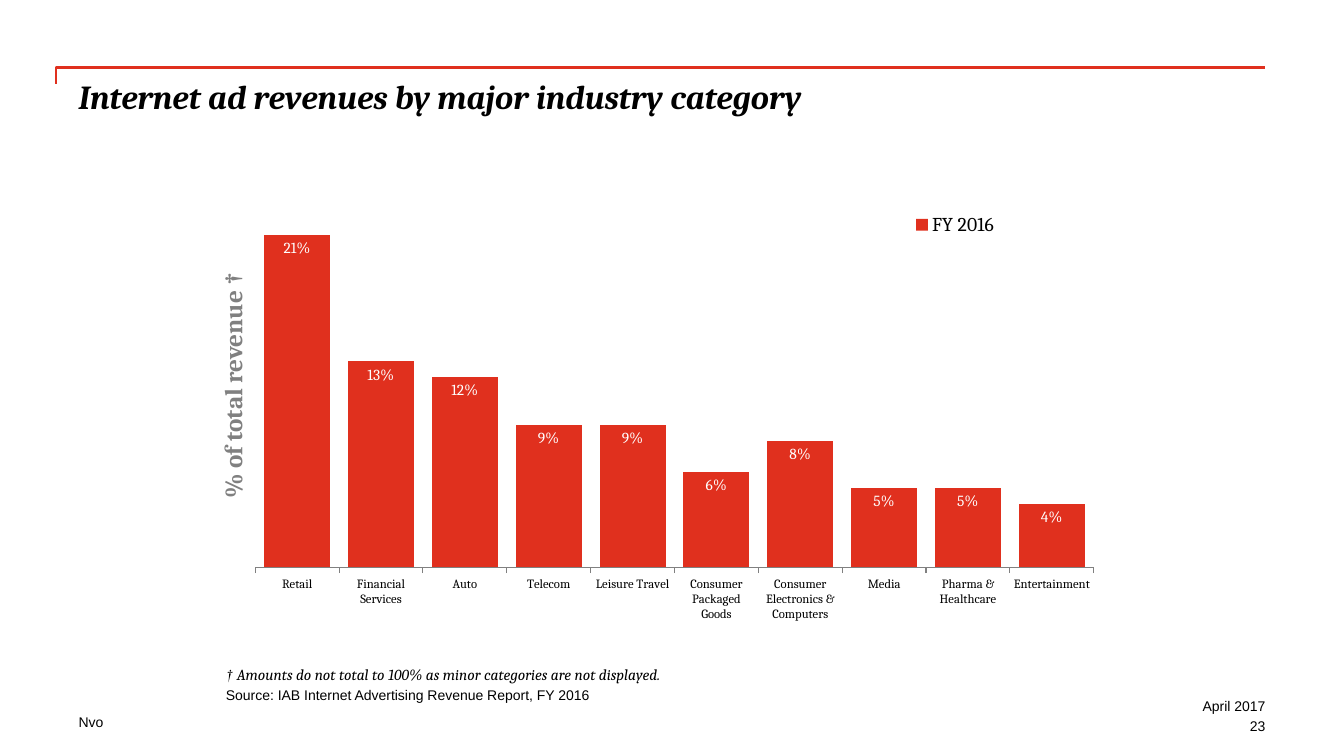
from lxml.etree import SubElement
from pptx import Presentation
from pptx.chart.data import CategoryChartData
from pptx.dml.color import RGBColor
from pptx.enum.chart import (XL_CHART_TYPE, XL_LABEL_POSITION,
                             XL_LEGEND_POSITION, XL_TICK_MARK)
from pptx.enum.text import MSO_ANCHOR, PP_ALIGN
from pptx.oxml.ns import qn
from pptx.util import Inches, Pt

COLORS = {"red": "E0301E", "black": "000000", "gray": "808080", "white": "FFFFFF"}
SERIF, SANS = "Cambria", "Arial"
REVENUE_SHARES = [
    ("Entertainment", 0.04),
    ("Pharma & Healthcare", 0.05),
    ("Media", 0.05),
    ("Consumer Electronics & Computers", 0.08),
    ("Consumer Packaged Goods", 0.06),
    ("Leisure Travel", 0.09),
    ("Telecom", 0.09),
    ("Auto", 0.12),
    ("Financial\nServices", 0.13),
    ("Retail", 0.21),
]


def rgb(name):
    return RGBColor.from_string(COLORS[name])


def set_font(font, size, name=SERIF, color="black", bold=False, italic=False):
    font.size, font.name = Pt(size), name
    font.bold, font.italic = bold, italic
    font.color.rgb = rgb(color)


def add_text(s, text, x, y, w, h, align=PP_ALIGN.LEFT, anchor=MSO_ANCHOR.TOP,
             rotation=0, **font):
    sp = s.shapes.add_textbox(Inches(x), Inches(y), Inches(w), Inches(h))
    sp.rotation = rotation
    tf = sp.text_frame
    tf.word_wrap = True
    tf.vertical_anchor = anchor
    tf.margin_left = tf.margin_right = tf.margin_top = tf.margin_bottom = 0
    p = tf.paragraphs[0]
    p.alignment = align
    r = p.add_run()
    r.text = text
    set_font(r.font, **font)


def set_layout(parent, index, inner=False, **fractions):
    """Place a chart part at fractions (x, y, w, h) of the chart."""
    for old in parent.findall(qn("c:layout")):
        parent.remove(old)
    layout = SubElement(parent, qn("c:layout"))
    parent.insert(index, layout)
    manual = SubElement(layout, qn("c:manualLayout"))
    if inner:
        SubElement(manual, qn("c:layoutTarget")).set("val", "inner")
    for mode in ("xMode", "yMode"):
        SubElement(manual, qn("c:" + mode)).set("val", "edge")
    for key, value in fractions.items():
        SubElement(manual, qn("c:" + key)).set("val", str(value))


def add_header(s, x, y, w):
    # Rule with a short drop at its left end
    builder = s.shapes.build_freeform(Inches(x), Inches(y + 0.16))
    builder.add_line_segments([(Inches(x), Inches(y)),
                               (Inches(x + w), Inches(y))], close=False)
    rule = builder.convert_to_shape()
    rule.shadow.inherit = False
    rule.fill.background()
    rule.line.color.rgb = rgb("red")
    rule.line.width = Pt(1.5)
    # Title
    add_text(s, "Internet ad revenues by major industry category",
             x + 0.22, y + 0.08, w - 0.22, 1, size=24, bold=True, italic=True)


def add_revenue_chart(s, x, y, w, h):
    data = CategoryChartData(number_format="0%")
    data.categories = [name for name, _ in REVENUE_SHARES]
    data.add_series("FY 2016", [share for _, share in REVENUE_SHARES])
    chart = s.shapes.add_chart(XL_CHART_TYPE.COLUMN_CLUSTERED, Inches(x), Inches(y),
                               Inches(w), Inches(h), data).chart
    chart.has_title = False
    set_font(chart.font, 18, SANS)

    # Columns and their labels
    plot = chart.plots[0]
    plot.gap_width = 27
    plot.vary_by_categories = False
    fill = plot.series[0].format.fill
    fill.solid()
    fill.fore_color.rgb = rgb("red")
    plot.has_data_labels = True
    labels = plot.data_labels
    labels.show_value = True
    labels.position = XL_LABEL_POSITION.INSIDE_END
    labels.number_format, labels.number_format_is_linked = "0%", False
    set_font(labels.font, 11, color="white")

    # Axes
    cat, val = chart.category_axis, chart.value_axis
    cat.reverse_order = True
    cat.has_major_gridlines = False
    cat.major_tick_mark = XL_TICK_MARK.OUTSIDE
    cat.format.line.color.rgb = rgb("gray")
    set_font(cat.tick_labels.font, 9)
    val.visible = False
    val.has_major_gridlines = False
    val.minimum_scale, val.maximum_scale = 0, 0.25

    # Legend and plot placement
    chart.has_legend = True
    legend = chart.legend
    legend.position = XL_LEGEND_POSITION.RIGHT
    legend.include_in_layout = False
    set_font(legend.font, 14)
    set_layout(legend._element, 1, x=0.75, y=0.1, w=0.11, h=0.08)
    set_layout(chart._chartSpace.chart.plotArea, 0, inner=True,
               x=0.043, y=0.034, w=0.913, h=0.784)

    # Value axis caption, turned to read upwards
    add_text(s, "% of total revenue †", x - 1.15, y + 2.13, 2.66, 0.33,
             align=PP_ALIGN.CENTER, rotation=270, size=18, color="gray", bold=True)


def add_notes_below_chart(s, x, y, w):
    add_text(s, "† Amounts do not total to 100% as minor categories are not displayed.",
             x, y, w, 0.18, size=11, italic=True)
    add_text(s, "Source: IAB Internet Advertising Revenue Report, FY 2016",
             x, y + 0.21, w, 0.17, anchor=MSO_ANCHOR.BOTTOM, size=10, name=SANS)


def add_footer(s, x, y, w):
    small = dict(size=10, name=SANS)
    add_text(s, "Nvo", x, y + 0.16, 3.78, 0.17, **small)
    for i, text in enumerate(["April 2017", "23"]):
        add_text(s, text, x + w - 2.22, y + 0.2 * i, 2.22, 0.17,
                 align=PP_ALIGN.RIGHT, **small)


def main():
    prs = Presentation()
    prs.slide_width, prs.slide_height = Inches(13.33), Inches(7.5)
    s = prs.slides.add_slide(prs.slide_layouts[6])
    add_header(s, 0.56, 0.67, 11.99)
    add_revenue_chart(s, 2.14, 1.53, 9.11, 5.01)
    add_notes_below_chart(s, 2.24, 6.6, 8.37)
    add_footer(s, 0.78, 6.92, 11.77)
    prs.save("out.pptx")


if __name__ == "__main__":
    main()
